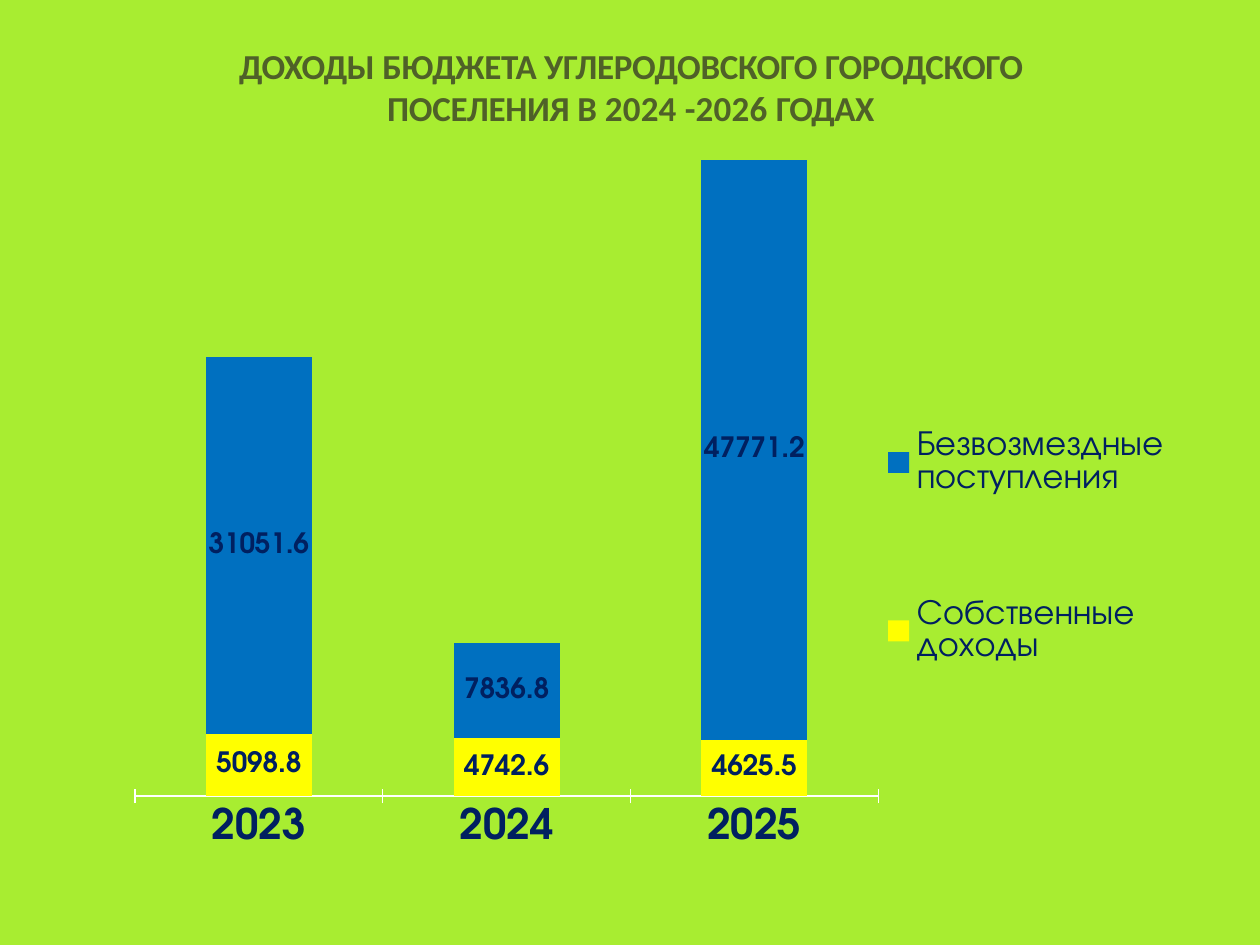
from lxml.etree import Element, SubElement
from pptx import Presentation
from pptx.chart.data import CategoryChartData
from pptx.dml.color import RGBColor
from pptx.enum.chart import XL_CHART_TYPE, XL_LEGEND_POSITION, XL_TICK_LABEL_POSITION, XL_TICK_MARK
from pptx.enum.shapes import MSO_SHAPE
from pptx.enum.text import PP_ALIGN
from pptx.oxml.ns import qn
from pptx.util import Cm, Pt

YEARS = ["2023", "2024", "2025"]
INCOME = [
    ("Собственные доходы", "FFFF00", [5098.8, 4742.6, 4625.5]),
    ("Безвозмездные поступления", "0070C0", [31051.6, 7836.8, 47771.2]),
]
# Each piece of the title with its letter spacing in points
TITLE = [
    ("ДОХОДЫ ", -0.3),
    ("БЮДЖЕТА УГЛЕРОДОВСКОГО ГОРОДСКОГО ПОСЕЛЕНИЯ ", -0.2),
    ("В ", 0),
    ("2024 -2026 ", 0.1),
    ("ГОДАХ", -0.4),
]


def rgb(value):
    return RGBColor.from_string(value)


def set_font(font, size, color, bold=False, name="TeX Gyre Adventor"):
    font.name, font.size, font.bold = name, Pt(size), bold
    font.color.rgb = rgb(color)


def set_layout(part, index, x, y, w, h, inner=False):
    """Fix a chart part at fractions of the chart area; index is the place of c:layout in it."""
    for old in part.findall(qn("c:layout")):
        part.remove(old)
    layout = Element(qn("c:layout"))
    part.insert(index, layout)
    manual = SubElement(layout, qn("c:manualLayout"))
    settings = [("layoutTarget", "inner")] if inner else []
    settings += [("xMode", "edge"), ("yMode", "edge"), ("x", x), ("y", y), ("w", w), ("h", h)]
    for tag, value in settings:
        SubElement(manual, qn(f"c:{tag}")).set("val", str(value))


class Deck:
    back, ink, title_color, axis_color = "A8ED31", "002060", "4F6128", "FFFFFF"

    def __init__(self, prs):
        self.s = prs.slides.add_slide(prs.slide_layouts[6])

    def backdrop(self, width, height):
        sp = self.s.shapes.add_shape(MSO_SHAPE.RECTANGLE, 0, 0, width, height)
        sp.shadow.inherit = False
        sp.fill.solid()
        sp.fill.fore_color.rgb = rgb(self.back)
        sp.line.fill.background()

    def title(self, pieces, x, y, w, h):
        tf = self.s.shapes.add_textbox(Cm(x), Cm(y), Cm(w), Cm(h)).text_frame
        tf.word_wrap = True
        tf.margin_left = tf.margin_right = tf.margin_bottom = 0
        tf.margin_top = Cm(0.05)
        p = tf.paragraphs[0]
        p.alignment = PP_ALIGN.CENTER
        set_font(p.font, 20, self.title_color, True, "Calibri")
        for text, spacing in pieces:
            r = p.add_run()
            r.text = text
            r._r.get_or_add_rPr().set("spc", str(round(spacing * 100)))

    def stacked_columns(self, categories, series, x, y, w, h):
        data = CategoryChartData(number_format="General")
        data.categories = categories
        for name, _, values in series:
            data.add_series(name, values)
        chart = self.s.shapes.add_chart(
            XL_CHART_TYPE.COLUMN_STACKED, Cm(x), Cm(y), Cm(w), Cm(h), data).chart
        chart.has_title = False
        set_font(chart.font, 9.7, self.axis_color)
        plot = chart.plots[0]
        plot.gap_width, plot.overlap, plot.vary_by_categories = 134, 100, False
        for bars, (_, color, _) in zip(plot.series, series):
            bars.format.fill.solid()
            bars.format.fill.fore_color.rgb = rgb(color)
            labels = bars.data_labels
            labels.show_value = True
            set_font(labels.font, 16, self.ink, True)
        self.axes(chart)
        self.legend(chart)
        area = chart._chartSpace.chart.plotArea
        set_layout(area, 0, 0.046, 0.046, 0.675, 0.854, inner=True)

    def axes(self, chart):
        years, amounts = chart.category_axis, chart.value_axis
        years.major_tick_mark = XL_TICK_MARK.CROSS
        years.tick_label_position = XL_TICK_LABEL_POSITION.LOW
        years.format.line.color.rgb = rgb(self.axis_color)
        years.format.line.width = Pt(0.75)
        set_font(years.tick_labels.font, 24, self.ink, True)
        amounts.visible = amounts.has_major_gridlines = False
        amounts.minimum_scale, amounts.maximum_scale = 0, 52400

    def legend(self, chart):
        chart.has_legend = True
        legend = chart.legend
        legend.position = XL_LEGEND_POSITION.RIGHT
        legend.include_in_layout = False
        set_font(legend.font, 20, self.ink)
        set_layout(legend._element, 1, 0.72, 0.27, 0.27, 0.59)


def main():
    prs = Presentation()
    prs.slide_width, prs.slide_height = Cm(25.4), Cm(19.05)
    deck = Deck(prs)
    deck.backdrop(prs.slide_width, prs.slide_height)
    deck.title(TITLE, 3.48, 0.84, 18.47, 1.75)
    deck.stacked_columns(YEARS, INCOME, 1.7, 2.54, 22.2, 15.01)
    prs.save("out.pptx")


if __name__ == "__main__":
    main()
